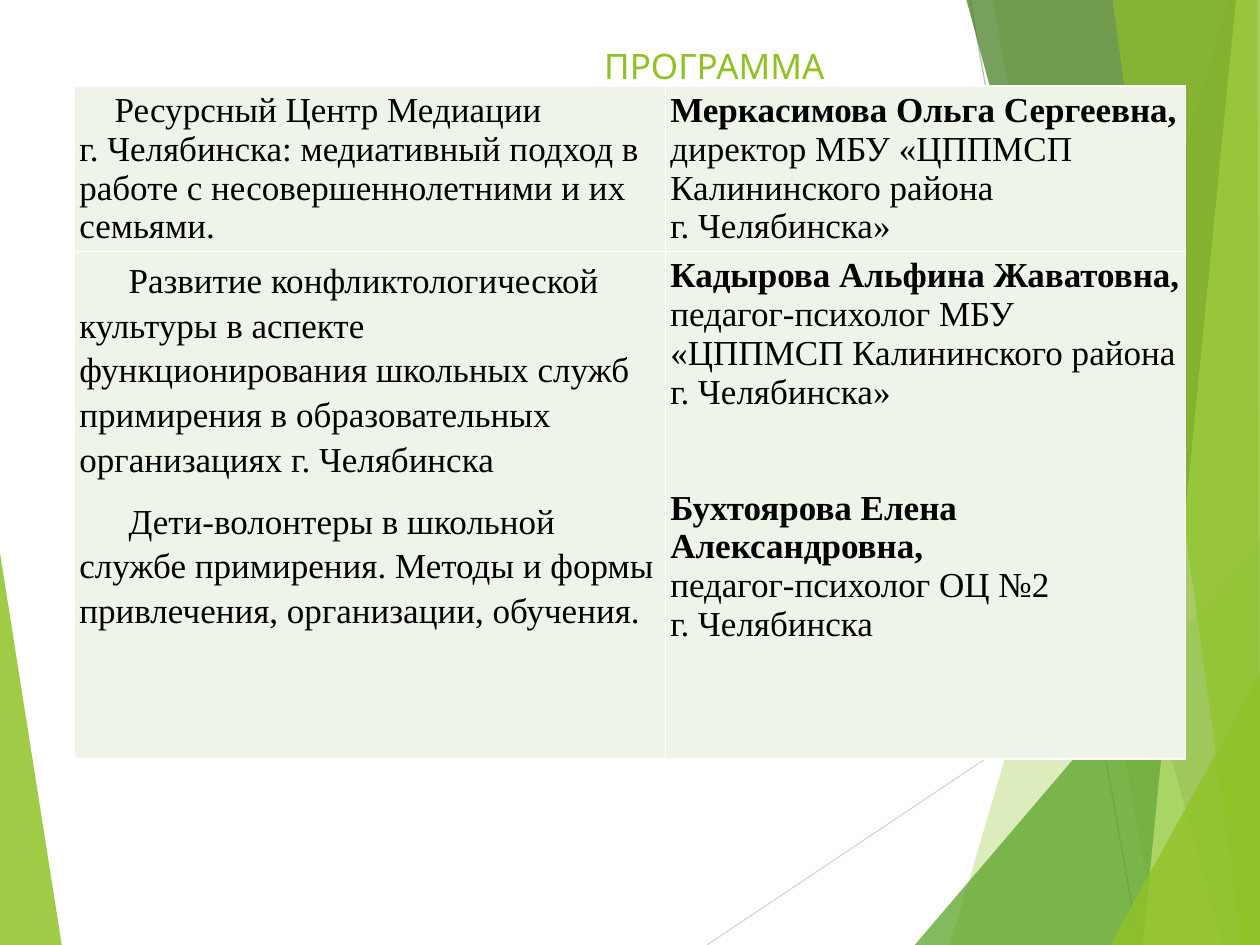
import pptx
import pptx.util
import pptx.dml.color
import pptx.enum.shapes
import pptx.enum.text
import pptx.oxml
import pptx.oxml.ns
import lxml.etree

RGBColor = pptx.dml.color.RGBColor
WHITE = RGBColor(0xFF, 0xFF, 0xFF)
BLACK = RGBColor(0, 0, 0)
CELL = RGBColor(0xEE, 0xF4, 0xE8)
LIME = RGBColor(0x90, 0xC2, 0x26)
GREEN = RGBColor(0x54, 0xA0, 0x21)
FOREST = RGBColor(0x3F, 0x78, 0x19)
PALE = RGBColor(0xC0, 0xE4, 0x74)
LIGHT_GREY = RGBColor(0xD9, 0xD9, 0xD9)
GREY = RGBColor(0xBF, 0xBF, 0xBF)

WIDTH, HEIGHT = pptx.util.Inches(10), pptx.util.Inches(7.5)
SIZE = pptx.util.Pt(20)

LEFT_WEDGE = (LIME, 85, [(0, 58.5), (4.9, 100), (0, 100)])
RAYS = [
    (LIME, 30, [(97.5, 0), (75.4, 100), (100, 100), (100, 0)]),
    (LIME, 20, [(78.8, 0), (91.9, 100), (100, 100), (100, 0)]),
    (GREEN, 72, [(72.6, 100), (100, 57.2), (100, 100)]),
    (FOREST, 70, [(76.7, 0), (97, 100), (100, 100), (100, 0)]),
    (PALE, 70, [(98.1, 0), (90.7, 100), (100, 100), (100, 0)]),
    (LIME, 65, [(88.3, 0), (98.6, 100), (100, 100), (99.8, 0)]),
    (LIME, 80, [(88.1, 100), (100, 71.3), (100, 100)]),
]
LINES = [
    (LIGHT_GREY, (56.1, 100), (100, 60.9)),
    (GREY, (77, 0), (90.4, 100)),
]

INDENTED = {"indent": 0.28}
TOPIC = {"indent": 0.39, "spacing": 1.15, "after": 10}
PROGRAMME = [
    [
        [
            (INDENTED, "", "Ресурсный Центр Медиации"),
            ({}, "", "г. Челябинска: медиативный подход в работе с несовершеннолетними и их семьями."),
        ],
        [
            ({}, "Меркасимова Ольга Сергеевна,", " директор МБУ «ЦППМСП Калининского района"),
            ({}, "", "г. Челябинска»"),
        ],
    ],
    [
        [
            (TOPIC, "", "Развитие конфликтологической культуры в аспекте функционирования "
                        "школьных служб примирения в образовательных организациях г. Челябинска"),
            (TOPIC, "", "Дети-волонтеры в школьной службе примирения. Методы и формы "
                        "привлечения, организации, обучения."),
        ],
        [
            ({}, "Кадырова Альфина Жаватовна,", ""),
            ({}, "", "педагог-психолог МБУ «ЦППМСП Калининского района г. Челябинска»"),
            ({"before": 44}, "Бухтоярова Елена Александровна,", ""),
            ({}, "", "педагог-психолог ОЦ №2"),
            ({}, "", "г. Челябинска"),
        ],
    ],
]


def across(percent):
    """Return a share of the slide's width."""
    return round(WIDTH * percent / 100)


def down(percent):
    """Return a share of the slide's height."""
    return round(HEIGHT * percent / 100)


def add_facet(page, color, opacity, corners):
    """Draw a translucent polygon."""
    points = [(across(x), down(y)) for x, y in corners]
    builder = page.shapes.build_freeform(*points[0])
    builder.add_line_segments(points[1:], close=True)
    facet = builder.convert_to_shape()
    facet.shadow.inherit = False
    facet.line.fill.background()
    facet.fill.solid()
    facet.fill.fore_color.rgb = color
    tone = facet.fill._xPr.find(".//" + pptx.oxml.ns.qn("a:srgbClr"))
    lxml.etree.SubElement(tone, pptx.oxml.ns.qn("a:alpha"), val=str(opacity * 1000))


def add_line(page, color, start, end):
    """Draw a thin straight line."""
    line = page.shapes.add_connector(
        pptx.enum.shapes.MSO_CONNECTOR.STRAIGHT,
        across(start[0]), down(start[1]), across(end[0]), down(end[1]))
    line.line.color.rgb = color
    line.line.width = pptx.util.Pt(0.75)
    lxml.etree.SubElement(line._element.spPr, pptx.oxml.ns.qn("a:effectLst"))


def format_span(span, font, color, bold=False):
    """Set the font of one run."""
    span.font.name = font
    span.font.size = SIZE
    span.font.bold = bold
    span.font.color.rgb = color


def fill_title(page):
    """Place and format the slide title."""
    box = page.shapes.title
    box.left, box.top, box.width, box.height = across(15.7), down(4), across(82), down(5.1)
    frame = box.text_frame
    frame.text = "ПРОГРАММА"
    frame.vertical_anchor = pptx.enum.text.MSO_ANCHOR.TOP
    frame.auto_size = pptx.enum.text.MSO_AUTO_SIZE.NONE
    para = frame.paragraphs[0]
    para.alignment = pptx.enum.text.PP_ALIGN.CENTER
    format_span(para.runs[0], "Cabin", LIME)


def set_borders(cell):
    """Give a cell thin white edges, placed before its fill."""
    properties = cell._tc.get_or_add_tcPr()
    for position, side in enumerate(("lnL", "lnR", "lnT", "lnB")):
        properties.insert(position, pptx.oxml.parse_xml(
            f'<a:{side} {pptx.oxml.ns.nsdecls("a")} w="12700"><a:solidFill>'
            f'<a:srgbClr val="{WHITE}"/></a:solidFill></a:{side}>'))


def fill_cell(cell, entries):
    """Write paragraphs of bold and plain text into a cell."""
    cell.fill.solid()
    cell.fill.fore_color.rgb = CELL
    set_borders(cell)
    inset = pptx.util.Inches(0.04)
    cell.margin_left = cell.margin_right = cell.margin_top = cell.margin_bottom = inset
    for index, (style, name, detail) in enumerate(entries):
        frame = cell.text_frame
        para = frame.add_paragraph() if index else frame.paragraphs[0]
        para.line_spacing = style.get("spacing", 1.0)
        para.space_before = pptx.util.Pt(style.get("before", 0))
        para.space_after = pptx.util.Pt(style.get("after", 0))
        indent = pptx.util.Inches(style.get("indent", 0))
        para._p.get_or_add_pPr().set("indent", str(indent))
        for words, bold in ((name, True), (detail, False)):
            if words:
                span = para.add_run()
                span.text = words
                format_span(span, "Times New Roman", BLACK, bold)


def add_programme(page):
    """Add the table of topics and speakers."""
    columns, rows = (46.9, 41.3), (17.5, 53.7)
    table = page.shapes.add_table(
        len(rows), len(columns), across(5.9), down(9.1),
        across(sum(columns)), down(sum(rows))).table
    table.first_row = table.horz_banding = False
    for column, share in zip(table.columns, columns):
        column.width = across(share)
    for row, share, topics in zip(table.rows, rows, PROGRAMME):
        row.height = down(share)
        for cell, entries in zip(row.cells, topics):
            fill_cell(cell, entries)


def main():
    """Build and save the slide."""
    deck = pptx.Presentation()
    deck.slide_width, deck.slide_height = WIDTH, HEIGHT
    page = deck.slides.add_slide(deck.slide_layouts[5])
    add_facet(page, *LEFT_WEDGE)
    for line in LINES:
        add_line(page, *line)
    for ray in RAYS:
        add_facet(page, *ray)
    fill_title(page)
    add_programme(page)
    deck.save("out.pptx")


if __name__ == "__main__":
    main()
